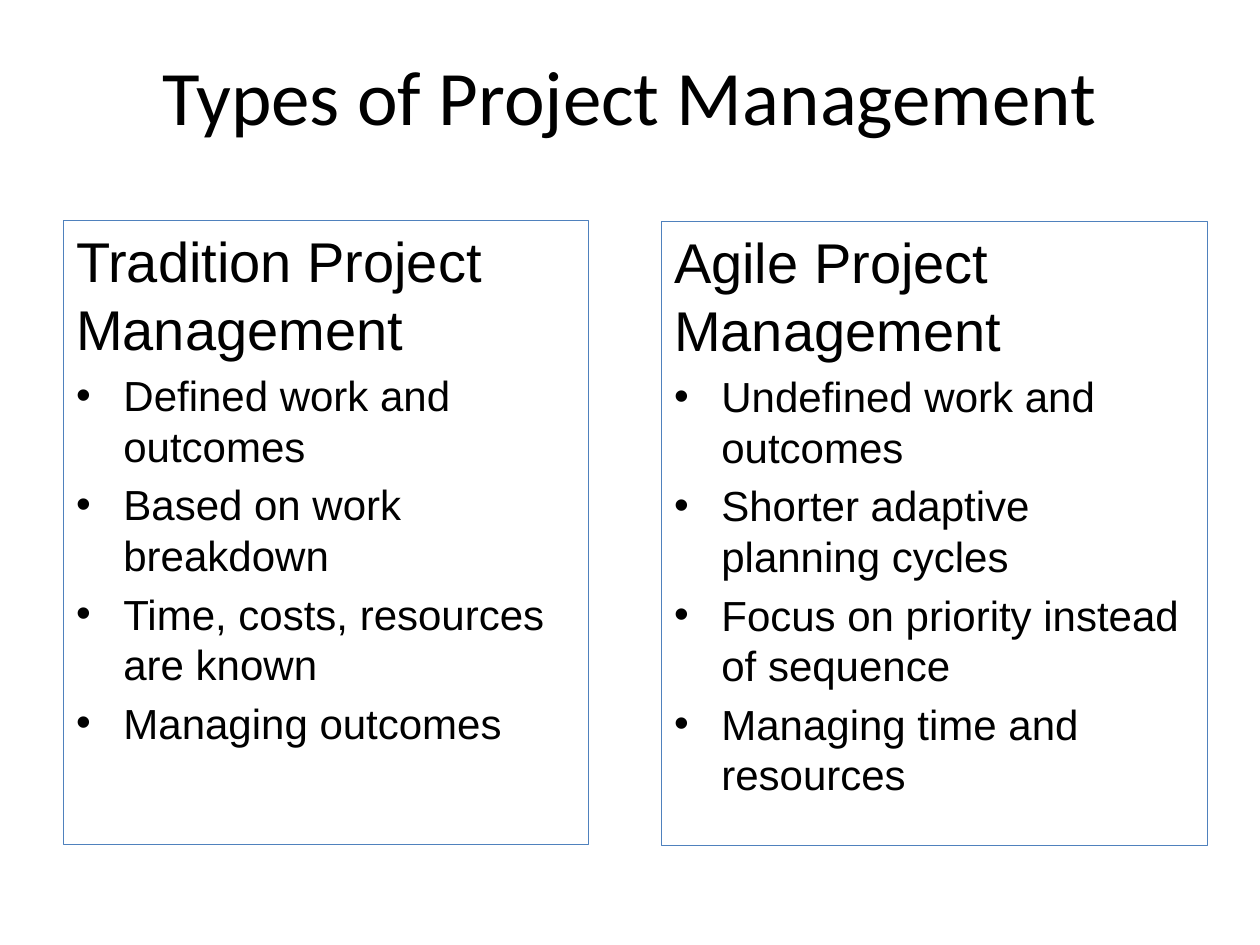
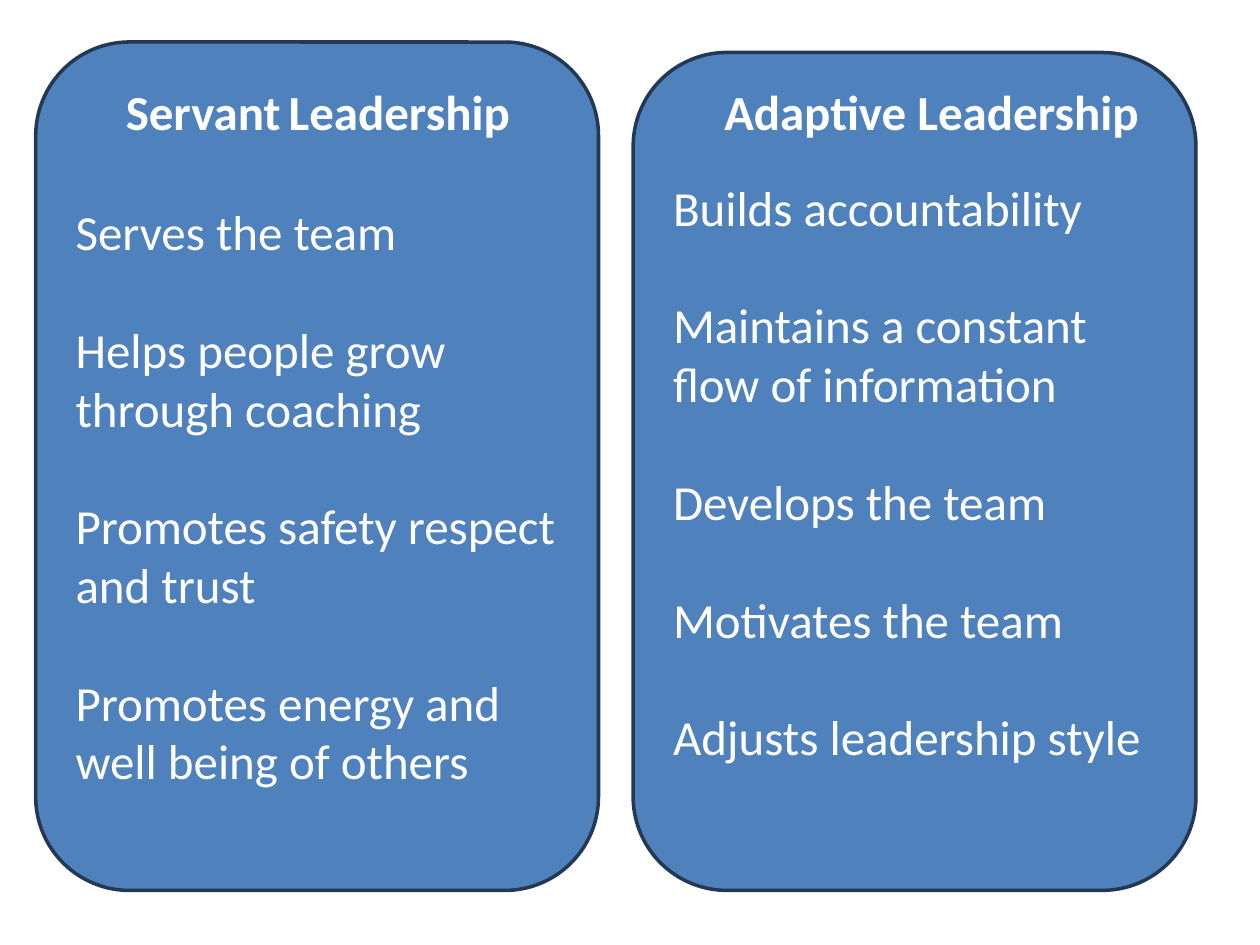
from lxml import etree
from pptx import Presentation, util as u
from pptx.dml.color import RGBColor
from pptx.enum import shapes, text
from pptx.oxml.ns import qn

BLACK = RGBColor(0x00, 0x00, 0x00)
WHITE = RGBColor(0xFF, 0xFF, 0xFF)
BLUE = RGBColor(0x4F, 0x81, 0xBD)
NAVY = RGBColor(0x23, 0x39, 0x53)

deck = Presentation()
deck.slide_width, deck.slide_height = u.Inches(10), u.Inches(7.5)
COL, ROW = deck.slide_width / 120, deck.slide_height / 90


def cells(left, top, width, height):
    """Turn grid columns and rows into slide lengths."""
    return [int(left * COL), int(top * ROW), int(width * COL), int(height * ROW)]


def write(paragraph, words, size=28, font="Calibri", color=WHITE, bold=False, before=0,
          align=text.PP_ALIGN.LEFT):
    paragraph.alignment = align
    paragraph.space_before = u.Pt(before)
    run = paragraph.add_run()
    run.text = words
    run.font.size, run.font.name, run.font.bold = u.Pt(size), font, bold
    run.font.color.rgb = color


# Slide 1: two kinds of project management
types_slide = deck.slides.add_slide(deck.slide_layouts[3])
title, *panels = types_slide.placeholders
title.left, title.top, title.width, title.height = cells(6, 4, 108, 15)
title.text_frame.vertical_anchor = text.MSO_ANCHOR.TOP
write(title.text_frame.paragraphs[0], "Types of Project Management", size=44, color=BLACK,
      align=text.PP_ALIGN.CENTER)

methods = [
    (cells(6.05, 21, 50, 59.4), "Tradition Project Management",
     ["Defined work and outcomes", "Based on work breakdown",
      "Time, costs, resources are known", "Managing outcomes"]),
    (cells(63, 21.1, 52, 59.4), "Agile Project Management",
     ["Undefined work and outcomes", "Shorter adaptive planning cycles",
      "Focus on priority instead of sequence", "Managing time and resources"]),
]
for panel, (area, heading, traits) in zip(panels, methods):
    panel.left, panel.top, panel.width, panel.height = area
    panel.line.color.rgb, panel.line.width = BLUE, u.Pt(0.75)
    frame = panel.text_frame
    frame.auto_size = text.MSO_AUTO_SIZE.NONE
    first = frame.paragraphs[0]
    properties = first._p.get_or_add_pPr()
    properties.set("marL", "0")
    properties.set("indent", "0")
    etree.SubElement(properties, qn("a:buNone"))
    write(first, heading, size=32, font="Arial", color=BLACK)
    for trait in traits:
        write(frame.add_paragraph(), trait, size=24, font="Arial", color=BLACK, before=4.8)

# Slide 2: two leadership styles
LINE_GAP = 33.6
leadership_slide = deck.slides.add_slide(deck.slide_layouts[6])
styles = [
    (cells(3.4, 4, 53.6, 80.8), cells(10.8, 7.2, 41, 6.8), ["Servant", "Leadership"], LINE_GAP,
     ["Serves the team", "Helps people grow through coaching",
      "Promotes safety respect and trust", "Promotes energy and well being of others"]),
    (cells(60.3, 5, 53.6, 79.8), cells(67.8, 7.2, 43.4, 6.8), ["Adaptive Leadership"], 0,
     ["Builds accountability", "Maintains a constant flow of information",
      "Develops the team", "Motivates the team", "Adjusts leadership style"]),
]
for card_area, heading_area, heading_parts, drop, practices in styles:
    card = leadership_slide.shapes.add_shape(shapes.MSO_SHAPE.ROUNDED_RECTANGLE, *card_area)
    card.shadow.inherit = False
    card.fill.solid()
    card.fill.fore_color.rgb = BLUE
    card.line.color.rgb, card.line.width = NAVY, u.Pt(2)
    frame = card.text_frame
    frame.word_wrap = True
    frame.vertical_anchor = text.MSO_ANCHOR.MIDDLE
    frame.margin_top = u.Inches(0.05) + u.Pt(drop)
    for index, practice in enumerate(practices):
        paragraph = frame.add_paragraph() if index else frame.paragraphs[0]
        write(paragraph, practice, before=LINE_GAP if index else 0)

    heading = leadership_slide.shapes.add_textbox(*heading_area).text_frame
    heading.word_wrap = True
    heading.auto_size = text.MSO_AUTO_SIZE.SHAPE_TO_FIT_TEXT
    for index, part in enumerate(heading_parts):
        if index:
            write(heading.paragraphs[0], " ", size=20, color=BLACK)
        write(heading.paragraphs[0], part, bold=True)

deck.save("out.pptx")
